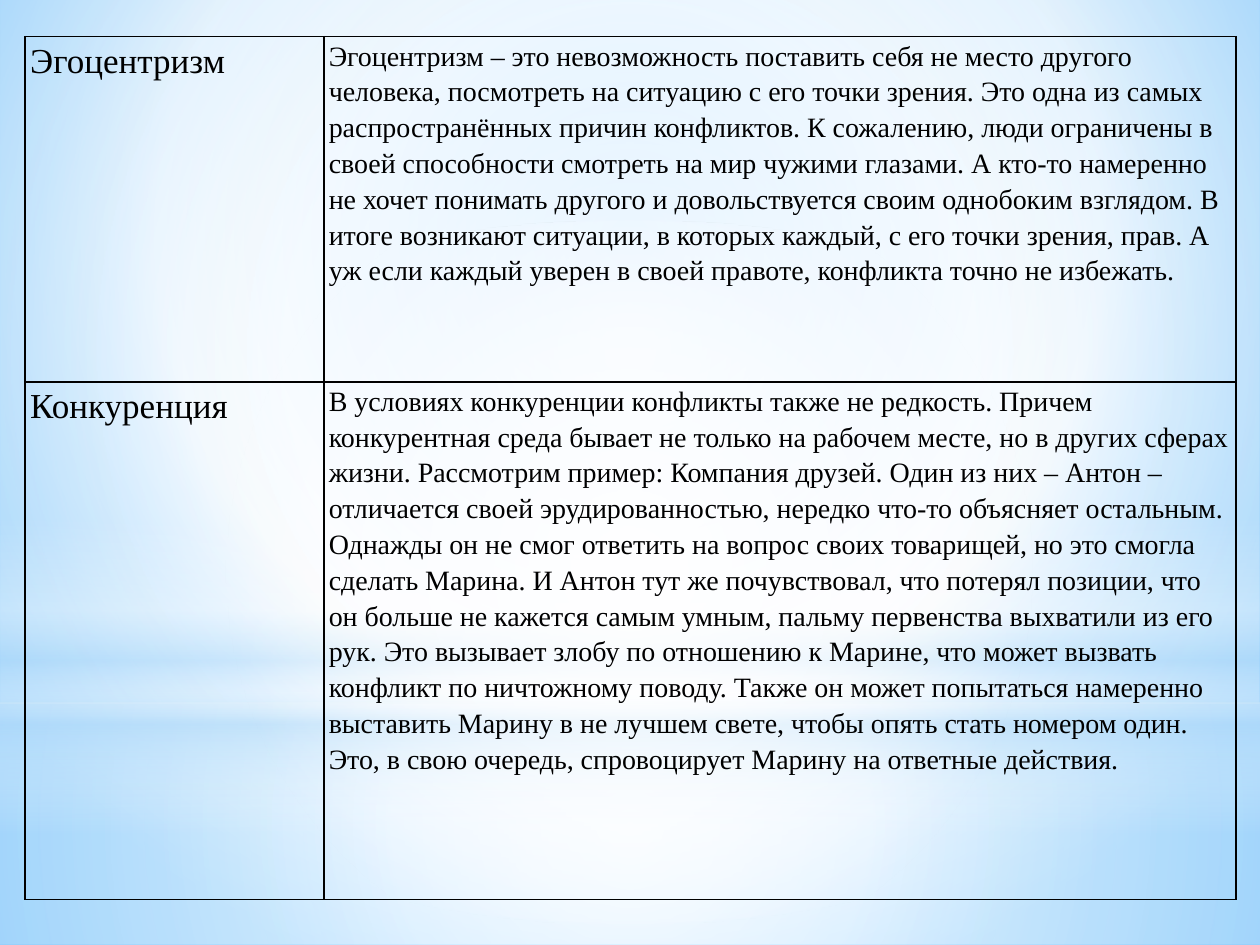
from dataclasses import dataclass

from pptx import Presentation
from pptx.dml.color import RGBColor
from pptx.enum.shapes import MSO_SHAPE as Shape
from pptx.oxml import parse_xml
from pptx.oxml.ns import nsdecls
from pptx.util import Inches, Pt


@dataclass(frozen=True)
class Theme:
    font: str = "Times New Roman"
    term_size: int = 20
    body_size: int = 16
    text: str = "000000"
    border: str = "000000"
    white: str = "FFFFFF"
    haze: str = "B4DCFA"
    sky: str = "9ED5FF"
    deep_sky: str = "5BB9FF"


T = Theme()
CENTER = (50, 50, 50, 50)

ROWS = [
    ("Эгоцентризм",
     "Эгоцентризм – это невозможность поставить себя не место другого человека, "
     "посмотреть на ситуацию с его точки зрения. Это одна из самых распространённых "
     "причин конфликтов. К сожалению, люди ограничены в своей способности смотреть на "
     "мир чужими глазами. А кто-то намеренно не хочет понимать другого и довольствуется "
     "своим однобоким взглядом. В итоге возникают ситуации, в которых каждый, с его "
     "точки зрения, прав. А уж если каждый уверен в своей правоте, конфликта точно не "
     "избежать."),
    ("Конкуренция",
     "В условиях конкуренции конфликты также не редкость. Причем конкурентная среда "
     "бывает не только на рабочем месте, но в других сферах жизни. Рассмотрим пример: "
     "Компания друзей. Один из них – Антон – отличается своей эрудированностью, нередко "
     "что-то объясняет остальным. Однажды он не смог ответить на вопрос своих товарищей, "
     "но это смогла сделать Марина. И Антон тут же почувствовал, что потерял позиции, что "
     "он больше не кажется самым умным, пальму первенства выхватили из его рук. Это "
     "вызывает злобу по отношению к Марине, что может вызвать конфликт по ничтожному "
     "поводу. Также он может попытаться намеренно выставить Марину в не лучшем свете, "
     "чтобы опять стать номером один. Это, в свою очередь, спровоцирует Марину на "
     "ответные действия."),
]


def set_gradient(fill, parent, stops, focus=None):
    """Fill with (position, colour, opacity) stops: circular with a focus, else vertical."""
    fill.solid()
    gs = "".join(
        f'<a:gs pos="{pos * 1000}"><a:srgbClr val="{color}">'
        f'<a:alpha val="{opacity * 1000}"/></a:srgbClr></a:gs>'
        for pos, color, opacity in stops)
    if focus:
        sides = " ".join(f'{side}="{v * 1000}"' for side, v in zip("ltrb", focus))
        direction = f'<a:path path="circle"><a:fillToRect {sides}/></a:path>'
    else:
        direction = '<a:lin ang="5400000" scaled="0"/>'
    gradient = parse_xml(f'<a:gradFill {nsdecls("a")} rotWithShape="1">'
                         f'<a:gsLst>{gs}</a:gsLst>{direction}</a:gradFill>')
    solid = parent.xpath("./a:solidFill")[0]
    parent.replace(solid, gradient)


def add_glow(s, kind, box, stops, focus=None):
    sp = s.shapes.add_shape(kind, *map(Inches, box))
    sp.shadow.inherit = False
    sp.line.fill.background()
    set_gradient(sp.fill, sp._element.spPr, stops, focus)


def add_backdrop(s, box):
    """Sky gradient with soft layers of light over it."""
    x, y, w, h = box
    fill = s.background.fill
    fill.solid()
    set_gradient(fill, s._element.xpath(".//p:bgPr")[0],
                 [(0, T.sky, 100), (60, T.white, 100), (100, T.deep_sky, 100)],
                 (20, 10, 20, 60))

    horizon = 5.58
    # Ground and sky
    add_glow(s, Shape.RECTANGLE, (x, y + horizon, w, h - horizon),
             [(0, T.white, 91), (37, T.white, 76), (100, T.haze, 79)], CENTER)
    add_glow(s, Shape.RECTANGLE, (x, y, w, horizon),
             [(0, T.white, 89), (48, T.white, 62), (100, T.haze, 79)], CENTER)
    # Horizon band
    add_glow(s, Shape.RECTANGLE, (x, y + 4.12, w, 2.5),
             [(0, T.white, 0), (29, T.white, 30), (45, T.haze, 40),
              (55, T.white, 26), (65, T.haze, 60), (100, T.white, 0)])
    # Central light
    add_glow(s, Shape.OVAL, (x, y + 1.75, w, 5.58),
             [(0, T.white, 100), (56, T.white, 0)], CENTER)


def style_cell(cell, text, size):
    cell.margin_left = cell.margin_right = Inches(0.04)
    cell.margin_top = cell.margin_bottom = 0
    cell.text = text
    p = cell.text_frame.paragraphs[0]
    p.line_spacing = 1.15
    p.font.name = T.font
    p.font.size = Pt(size)
    p.font.color.rgb = RGBColor.from_string(T.text)
    cell.fill.background()
    tc_pr = cell._tc.get_or_add_tcPr()
    # Borders come before the fill in the cell properties
    for i, side in enumerate("LRTB"):
        tc_pr.insert(i, parse_xml(
            f'<a:ln{side} {nsdecls("a")} w="{Pt(1)}"><a:solidFill>'
            f'<a:srgbClr val="{T.border}"/></a:solidFill></a:ln{side}>'))


def add_causes_table(s, box):
    x, y, w, h = box
    table = s.shapes.add_table(len(ROWS), 2, *map(Inches, box)).table
    table.first_row = table.horz_banding = False
    term_width = 2.37
    for column, width in zip(table.columns, (term_width, w - term_width)):
        column.width = Inches(width)
    for row, share in zip(table.rows, (0.4, 0.6)):
        row.height = Inches(h * share)
    for row, texts in zip(table.rows, ROWS):
        for cell, text, size in zip(row.cells, texts, (T.term_size, T.body_size)):
            style_cell(cell, text, size)


def main():
    prs = Presentation()
    prs.slide_width, prs.slide_height = Inches(10), Inches(7.5)
    s = prs.slides.add_slide(prs.slide_layouts[6])
    add_backdrop(s, (0, 0, 10, 7.5))
    add_causes_table(s, (0.2, 0.29, 9.61, 6.85))
    prs.save("out.pptx")


if __name__ == "__main__":
    main()
